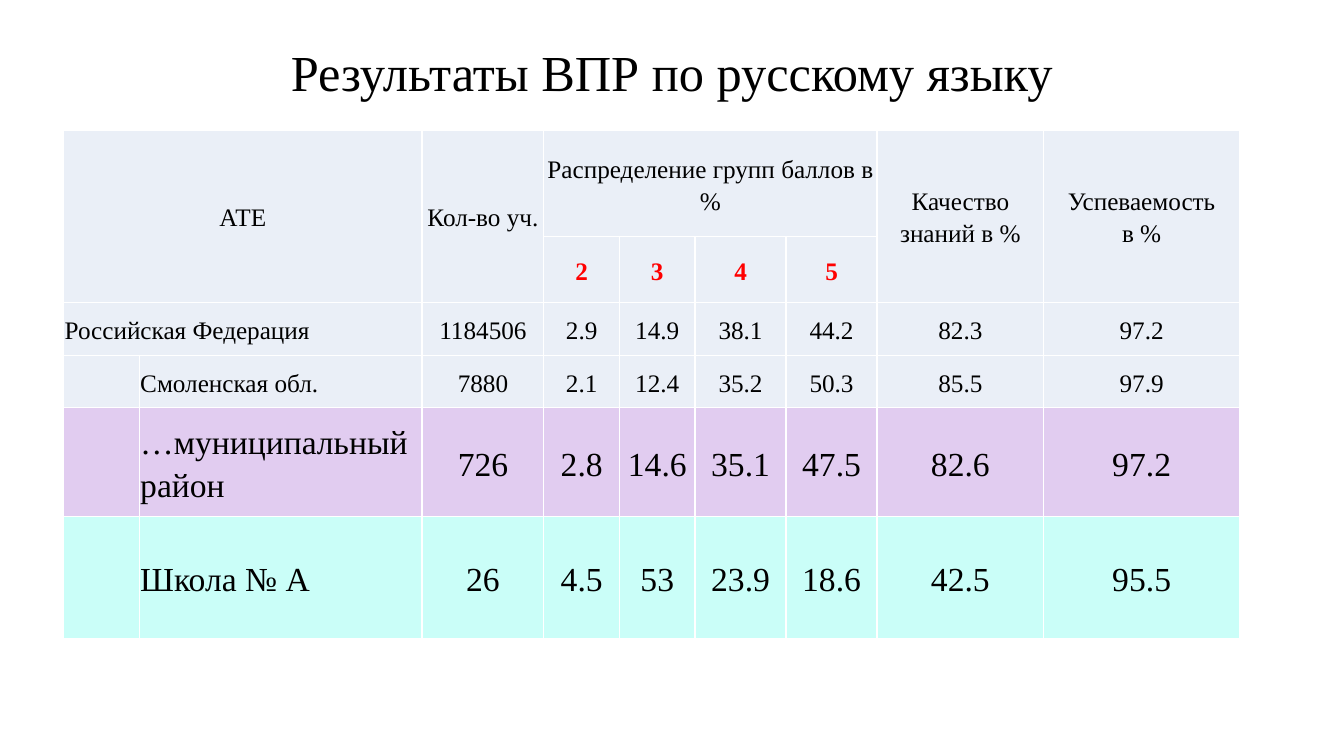
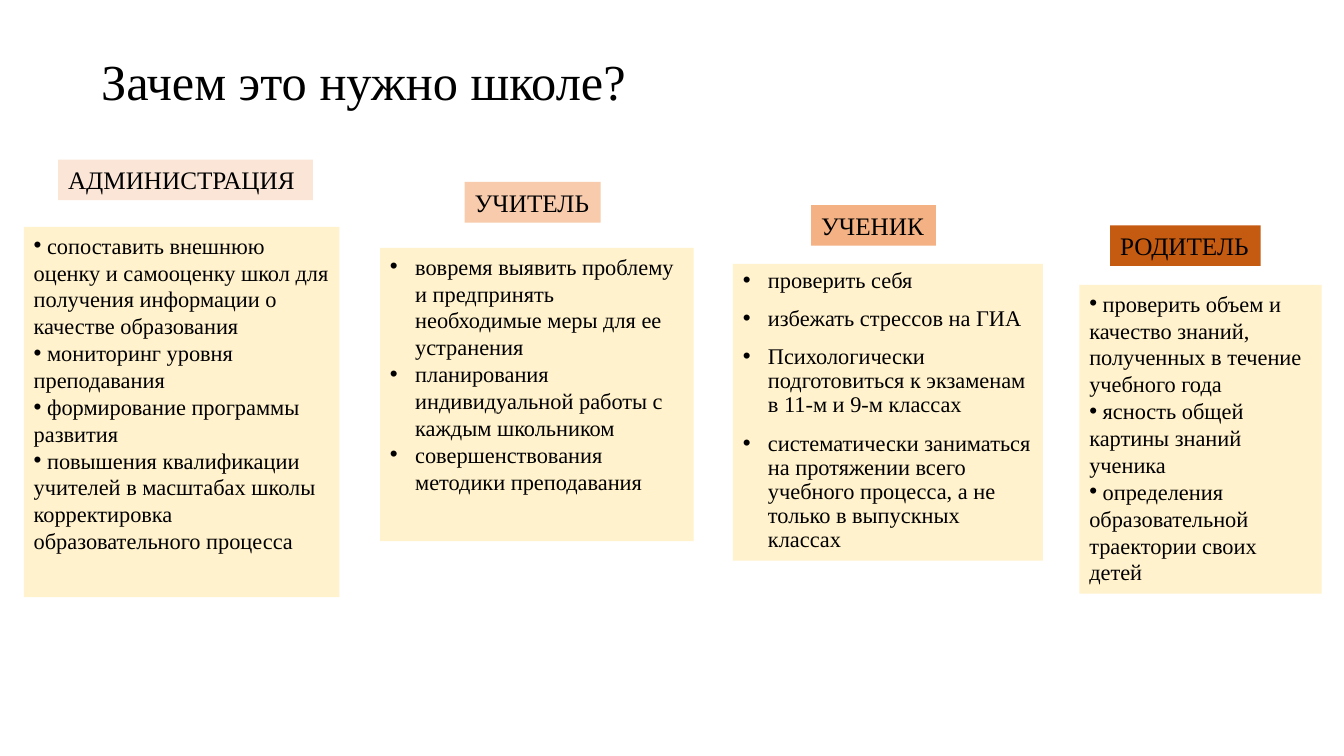
import dataclasses
import typing

import lxml.etree
import pptx
import pptx.dml.color
import pptx.enum.shapes
import pptx.enum.text
import pptx.oxml.ns
import pptx.presentation
import pptx.shapes.autoshape
import pptx.slide
import pptx.table
import pptx.text.text
import pptx.util

Pt = pptx.util.Pt
Align = pptx.enum.text.PP_ALIGN
Anchor = pptx.enum.text.MSO_ANCHOR
qn = pptx.oxml.ns.qn


@dataclasses.dataclass(frozen=True)
class Theme:
    font: str = "Times New Roman"
    ink: str = "000000"
    white: str = "FFFFFF"
    red: str = "FF0000"
    pale: str = "EAEFF7"
    lilac: str = "E1CCF0"
    mint: str = "CAFEF8"
    cream: str = "FFF2CC"
    head: float = 36
    large: float = 24
    mid: float = 18
    body: float = 16


class Box(typing.NamedTuple):
    left: float
    top: float
    width: float
    height: float


@dataclasses.dataclass(frozen=True)
class Row:
    cells: tuple[str, ...]
    fill: str
    size: float


@dataclasses.dataclass(frozen=True)
class Role:
    name: str
    tint: str
    tag: Box
    area: Box
    aims: tuple[str, ...]
    hang: float = 0
    lead: float = 1
    gap: float = 0


THEME = Theme()
COLS = (54, 202, 87, 54, 54, 65, 65, 119, 140)
HIGH = (76, 47, 38, 37, 78, 87)
GRID = Box(45.5, 93, sum(COLS), sum(HIGH))

HEADS = (
    (0, 0, 1, 1, "АТЕ"),
    (0, 2, 1, 2, "Кол-во уч."),
    (0, 3, 0, 6, "Распределение групп баллов в %"),
    (0, 7, 1, 7, "Качество знаний в %"),
    (0, 8, 1, 8, "Успеваемость\nв %"),
)
MARKS = ("2", "3", "4", "5")

ROWS = (
    Row(("Российская Федерация", "", "1184506", "2.9", "14.9", "38.1", "44.2", "82.3", "97.2"),
        THEME.pale, THEME.mid),
    Row(("", "Смоленская обл.", "7880", "2.1", "12.4", "35.2", "50.3", "85.5", "97.9"),
        THEME.pale, THEME.mid),
    Row(("", "…муниципальный район", "726", "2.8", "14.6", "35.1", "47.5", "82.6", "97.2"),
        THEME.lilac, THEME.large),
    Row(("", "Школа № А", "26", "4.5", "53", "23.9", "18.6", "42.5", "95.5"),
        THEME.mint, THEME.large),
)

ROLES = (
    Role("АДМИНИСТРАЦИЯ", "FBE5D6", Box(41.5, 114, 182, 29), Box(17, 162, 225.5, 264.5), (
        " сопоставить внешнюю оценку и самооценку школ для получения информации о качестве образования",
        " мониторинг уровня преподавания",
        " формирование программы развития",
        " повышения квалификации учителей в масштабах школы корректировка образовательного процесса",
    )),
    Role("УЧИТЕЛЬ", "F8CBAD", Box(332, 130, 97, 29), Box(271.5, 177, 224, 209.5), (
        "вовремя выявить проблему и предпринять необходимые меры для ее устранения",
        "планирования индивидуальной работы с каждым школьником",
        "совершенствования методики преподавания",
    ), hang=18),
    Role("УЧЕНИК", "F4B183", Box(579.5, 146.5, 89, 29), Box(523.5, 188.5, 221.5, 212), (
        "проверить себя",
        "избежать стрессов на ГИА",
        "Психологически подготовиться к экзаменам в 11-м и 9-м классах",
        "систематически заниматься на протяжении всего учебного процесса, "
        "а не только в выпускных классах",
    ), hang=18, lead=0.9, gap=10),
    Role("РОДИТЕЛЬ", "C55A11", Box(793, 161, 107.5, 29), Box(771, 203.5, 173, 220.5), (
        " проверить объем и качество знаний, полученных в течение учебного года",
        " ясность общей картины знаний ученика",
        " определения образовательной траектории своих детей",
    )),
)


def tone(code: str) -> pptx.dml.color.RGBColor:
    return pptx.dml.color.RGBColor.from_string(code)


def style(para: pptx.text.text._Paragraph, size: float, ink: str = THEME.ink,
          bold: bool = False) -> None:
    for run in para.runs:
        run.font.name = THEME.font
        run.font.size = Pt(size)
        run.font.bold = bold
        run.font.color.rgb = tone(ink)


def start(deck: pptx.presentation.Presentation, text: str, box: Box,
          align: Align) -> pptx.slide.Slide:
    slide = deck.slides.add_slide(deck.slide_layouts[5])
    title = slide.shapes.title
    title.left, title.top, title.width, title.height = map(Pt, box)
    frame = title.text_frame
    frame.text = text
    frame.word_wrap = True
    frame.auto_size = pptx.enum.text.MSO_AUTO_SIZE.NONE
    frame.vertical_anchor = Anchor.MIDDLE
    para = frame.paragraphs[0]
    para.alignment = align
    para.line_spacing = 0.9
    style(para, THEME.head)
    return slide


def edge(cell: pptx.table._Cell) -> None:
    props = cell._tc.get_or_add_tcPr()
    for spot, side in enumerate(("a:lnL", "a:lnR", "a:lnT", "a:lnB")):
        line = lxml.etree.Element(qn(side), w=str(Pt(1)))
        fill = lxml.etree.SubElement(line, qn("a:solidFill"))
        lxml.etree.SubElement(fill, qn("a:srgbClr"), val=THEME.white)
        props.insert(spot, line)


def put(cell: pptx.table._Cell, text: str, size: float, align: Align = Align.CENTER,
        ink: str = THEME.ink, bold: bool = False) -> None:
    cell.text_frame.text = text
    for para in cell.text_frame.paragraphs:
        para.alignment = align
        para.line_spacing = 1.15
        style(para, size, ink, bold)


def scores(slide: pptx.slide.Slide) -> None:
    table = slide.shapes.add_table(len(HIGH), len(COLS), *map(Pt, GRID)).table
    table.first_row = False
    table.horz_banding = False
    for col, width in zip(table.columns, COLS):
        col.width = Pt(width)
    fills = [THEME.pale] * 2 + [row.fill for row in ROWS]
    for line, high, fill in zip(table.rows, HIGH, fills):
        line.height = Pt(high)
        for cell in line.cells:
            cell.fill.solid()
            cell.fill.fore_color.rgb = tone(fill)
            cell.vertical_anchor = Anchor.MIDDLE
            cell.margin_left = cell.margin_right = Pt(0.7)
            cell.margin_top = cell.margin_bottom = Pt(0)
            edge(cell)
    for top, left, end, right, text in HEADS:
        cell = table.cell(top, left)
        cell.merge(table.cell(end, right))
        put(cell, text, THEME.mid)
    for col, mark in enumerate(MARKS, 3):
        put(table.cell(1, col), mark, THEME.mid, ink=THEME.red, bold=True)
    table.cell(2, 0).merge(table.cell(2, 1))
    for line, row in enumerate(ROWS, 2):
        for col, text in enumerate(row.cells):
            if text:
                align = Align.LEFT if col < 2 else Align.CENTER
                put(table.cell(line, col), text, row.size, align)


def panel(slide: pptx.slide.Slide, box: Box, fill: str,
          text: str) -> pptx.shapes.autoshape.Shape:
    shape = slide.shapes.add_shape(
        pptx.enum.shapes.MSO_SHAPE.RECTANGLE, *map(Pt, box))
    shape.shadow.inherit = False
    shape.fill.solid()
    shape.fill.fore_color.rgb = tone(fill)
    shape.line.fill.background()
    frame = shape.text_frame
    frame.word_wrap = True
    frame.vertical_anchor = Anchor.TOP
    frame.text = text
    for para in frame.paragraphs:
        para.alignment = Align.LEFT
    return shape


def bullet(para: pptx.text.text._Paragraph, hang: float) -> None:
    props = para._p.get_or_add_pPr()
    props.set("marL", str(Pt(hang)))
    props.set("indent", str(-Pt(hang)))
    lxml.etree.SubElement(props, qn("a:buFont"), typeface="Arial")
    lxml.etree.SubElement(props, qn("a:buChar"), char="•")


def draw(slide: pptx.slide.Slide, role: Role) -> None:
    tag = panel(slide, role.tag, role.tint, role.name)
    tag.text_frame.margin_right = Pt(0)
    style(tag.text_frame.paragraphs[0], THEME.mid)
    area = panel(slide, role.area, THEME.cream, "\n".join(role.aims))
    for rank, para in enumerate(area.text_frame.paragraphs):
        bullet(para, role.hang)
        para.line_spacing = role.lead
        para.space_before = Pt(role.gap if rank else 0)
        style(para, THEME.body)


def main() -> None:
    deck = pptx.Presentation()
    deck.slide_width, deck.slide_height = Pt(960), Pt(540)
    scores(start(deck, "Результаты ВПР по русскому языку",
                 Box(66, 29, 828, 50), Align.CENTER))
    goals = start(deck, "Зачем это нужно школе?", Box(65, 19, 828, 83), Align.LEFT)
    for role in ROLES:
        draw(goals, role)
    deck.save("out.pptx")


if __name__ == "__main__":
    main()
